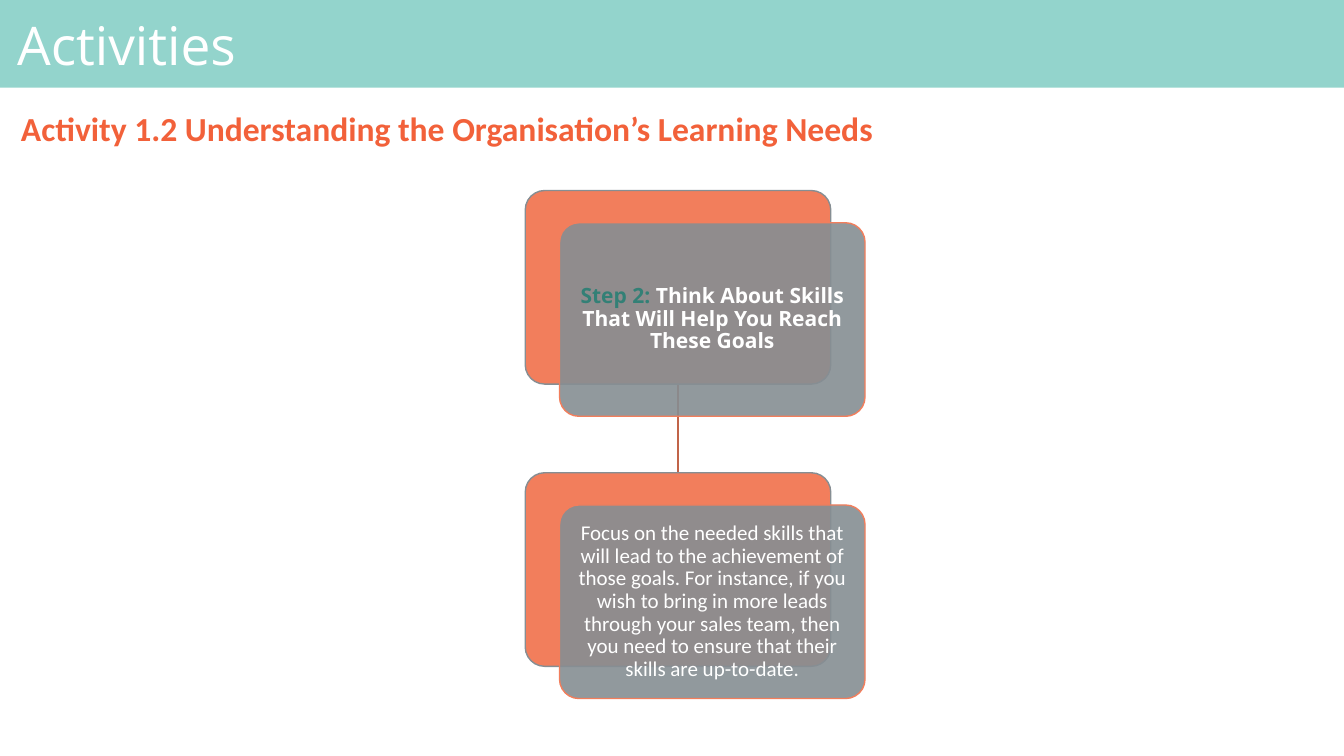
from lxml import etree
from pptx import Presentation
from pptx.dml.color import RGBColor
from pptx.enum import shapes, text
from pptx.oxml.ns import qn
from pptx.util import Inches, Pt

# Content
TITLE = "Activities"
SUBTITLE = "Activity 1.2 Understanding the Organisation’s Learning Needs"
CARDS = [  # font, bold, runs of (text, colour)
    ("Open Sans", True, [
        ("Step 2: ", "338076"),
        ("Think About Skills That Will Help You Reach These Goals", "FFFFFF")]),
    ("Calibri", False, [
        ("Focus on the needed skills that will lead to the achievement of those goals. "
         "For instance, if you wish to bring in more leads through your sales team, "
         "then you need to ensure that their skills are up-to-date.", "FFFFFF")]),
]

# Colours and layout, in inches
TEAL, ORANGE, GREY, WHITE = "93D4CC", "F27E5C", "868E93", "FFFFFF"
HEADING, LINK = "F2613A", "C16449"
CARD_LEFT, CARD_TOP, CARD_WIDTH, CARD_HEIGHT = 5.21, 1.89, 3.03, 1.92
OFFSET_X, OFFSET_Y, CARD_STEP = 0.34, 0.32, 2.8


def rgb(value):
    return RGBColor.from_string(value)


def add_box(slide, kind, box, fill, line=None):
    shape = slide.shapes.add_shape(kind, *map(Inches, box))
    shape.shadow.inherit = False
    shape.fill.solid()
    shape.fill.fore_color.rgb = rgb(fill)
    if line:
        shape.line.color.rgb = rgb(line)
        shape.line.width = Pt(1)
    else:
        shape.line.fill.background()
    return shape


def add_card(slide, left, top, fill, line):
    box = (left, top, CARD_WIDTH, CARD_HEIGHT)
    card = add_box(slide, shapes.MSO_SHAPE.ROUNDED_RECTANGLE, box, fill, line)
    card.adjustments[0] = 0.1
    return card


def set_text(shape, runs, font, size, bold, align, margins):
    frame = shape.text_frame
    frame.word_wrap = True
    frame.auto_size = text.MSO_AUTO_SIZE.NONE
    frame.vertical_anchor = text.MSO_ANCHOR.MIDDLE
    frame.margin_left = frame.margin_right = Inches(margins[0])
    frame.margin_top = frame.margin_bottom = Inches(margins[1])
    paragraph = frame.paragraphs[0]
    paragraph.alignment = align
    paragraph.line_spacing = 0.9
    paragraph.font.name, paragraph.font.size = font, Pt(size)
    paragraph.font.bold = bold
    for words, colour in runs:
        run = paragraph.add_run()
        run.text = words
        run.font.color.rgb = rgb(colour)


def main():
    presentation = Presentation()
    presentation.slide_width, presentation.slide_height = Inches(13.33), Inches(7.5)
    slide = presentation.slides.add_slide(presentation.slide_layouts[5])

    # Title on its band
    title = slide.shapes.title
    band = add_box(slide, shapes.MSO_SHAPE.RECTANGLE, (0, 0, 13.33, 0.87), TEAL)
    title.element.addprevious(band.element)
    title.left, title.top, title.width, title.height = map(
        Inches, (0.11, 0.09, 13.06, 0.78))
    set_text(title, [(TITLE, WHITE)], "Open Sans", 38, False,
             text.PP_ALIGN.LEFT, (0.06, 0.06))

    # Activity heading
    heading = slide.shapes.add_textbox(*map(Inches, (0.11, 1.0, 13.06, 0.6)))
    set_text(heading, [(SUBTITLE, HEADING)], "Calibri", 24, True,
             text.PP_ALIGN.JUSTIFY, (0.1, 0.05))

    # Line between the two cards
    middle = Inches(CARD_LEFT + CARD_WIDTH / 2)
    link = slide.shapes.add_connector(
        shapes.MSO_CONNECTOR.STRAIGHT, middle, Inches(CARD_TOP + CARD_HEIGHT),
        middle, Inches(CARD_TOP + CARD_STEP))
    link.line.color.rgb = rgb(LINK)
    link.line.width = Pt(1)
    etree.SubElement(link.element.spPr, qn("a:effectLst"))

    # Cards: orange back, translucent grey front with the text
    for index, (font, bold, runs) in enumerate(CARDS):
        top = CARD_TOP + index * CARD_STEP
        add_card(slide, CARD_LEFT, top, ORANGE, GREY)
        front = add_card(slide, CARD_LEFT + OFFSET_X, top + OFFSET_Y, GREY, ORANGE)
        colour = front.element.spPr.find(qn("a:solidFill"))[0]
        etree.SubElement(colour, qn("a:alpha"), val="90000")
        set_text(front, runs, font, 15, bold, text.PP_ALIGN.CENTER, (0.06, 0.06))

    presentation.save("out.pptx")


if __name__ == "__main__":
    main()
